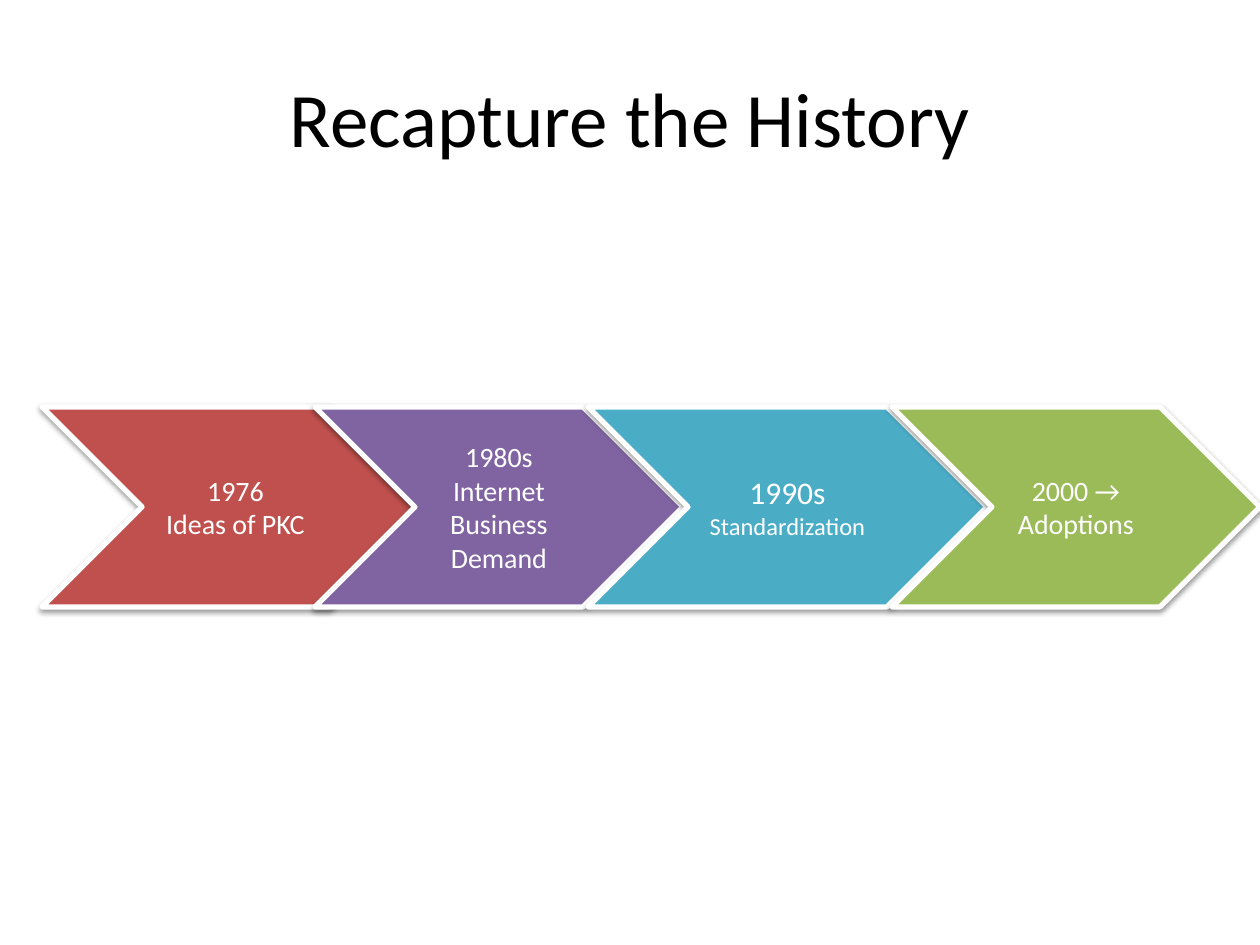
from lxml.etree import SubElement
from pptx import Presentation
from pptx.dml.color import RGBColor
from pptx.enum.shapes import MSO_SHAPE
from pptx.enum.text import MSO_ANCHOR, PP_ALIGN
from pptx.oxml.ns import qn
from pptx.util import Emu, Pt

PX = 914400 // 126
FONT = "Calibri"
BLACK = RGBColor(0x00, 0x00, 0x00)
WHITE = RGBColor(0xFF, 0xFF, 0xFF)
RED = RGBColor(0xC0, 0x50, 0x4D)
PURPLE = RGBColor(0x80, 0x64, 0xA2)
TEAL = RGBColor(0x4B, 0xAC, 0xC6)
GREEN = RGBColor(0x9B, 0xBB, 0x59)

TITLE = "Recapture the History"
ROW_TOP, ROW_HEIGHT = 407, 200
# left, width, fill, lines of (text, point size)
ERAS = [
    (42, 387, RED, [("1976", 16), ("Ideas of PKC", 16)]),
    (315, 368, PURPLE, [("1980s", 16), ("Internet Business", 16), ("Demand", 16)]),
    (588, 399, TEAL, [("1990s", 18), ("Standardization", 14)]),
    (892, 368, GREEN, [("2000 →", 16), ("Adoptions", 16)]),
]


def px(*lengths):
    return [Emu(length * PX) for length in lengths]


def write_lines(frame, lines, color):
    frame.word_wrap = True
    frame.vertical_anchor = MSO_ANCHOR.MIDDLE
    for index, (text, size) in enumerate(lines):
        para = frame.add_paragraph() if index else frame.paragraphs[0]
        para.alignment = PP_ALIGN.CENTER
        span = para.add_run()
        span.text = text
        span.font.name = FONT
        span.font.size = Pt(size)
        span.font.color.rgb = color


def add_soft_shadow(shape):
    shape.shadow.inherit = False
    effects = shape.element.spPr.find(qn("a:effectLst"))
    shadow = SubElement(effects, qn("a:outerShdw"), blurRad=str(Pt(3.1)),
                        dist=str(Pt(1.6)), dir=str(90 * 60000), rotWithShape="0")
    color = SubElement(shadow, qn("a:srgbClr"), val=str(BLACK))
    SubElement(color, qn("a:alpha"), val="38000")


def add_era(page, left, width, fill, lines):
    chevron = page.shapes.add_shape(
        MSO_SHAPE.CHEVRON, *px(left, ROW_TOP, width, ROW_HEIGHT))
    chevron.fill.solid()
    chevron.fill.fore_color.rgb = fill
    chevron.line.color.rgb = WHITE
    chevron.line.width = Pt(3)
    add_soft_shadow(chevron)
    write_lines(chevron.text_frame, lines, WHITE)


def main():
    deck = Presentation()
    deck.slide_width, deck.slide_height = px(1260, 945)
    page = deck.slides.add_slide(deck.slide_layouts[5])
    title = page.shapes.title
    title.left, title.top, title.width, title.height = px(63, 38, 1134, 157)
    write_lines(title.text_frame, [(TITLE, 44)], BLACK)
    for era in ERAS:
        add_era(page, *era)
    deck.save("out.pptx")


if __name__ == "__main__":
    main()
